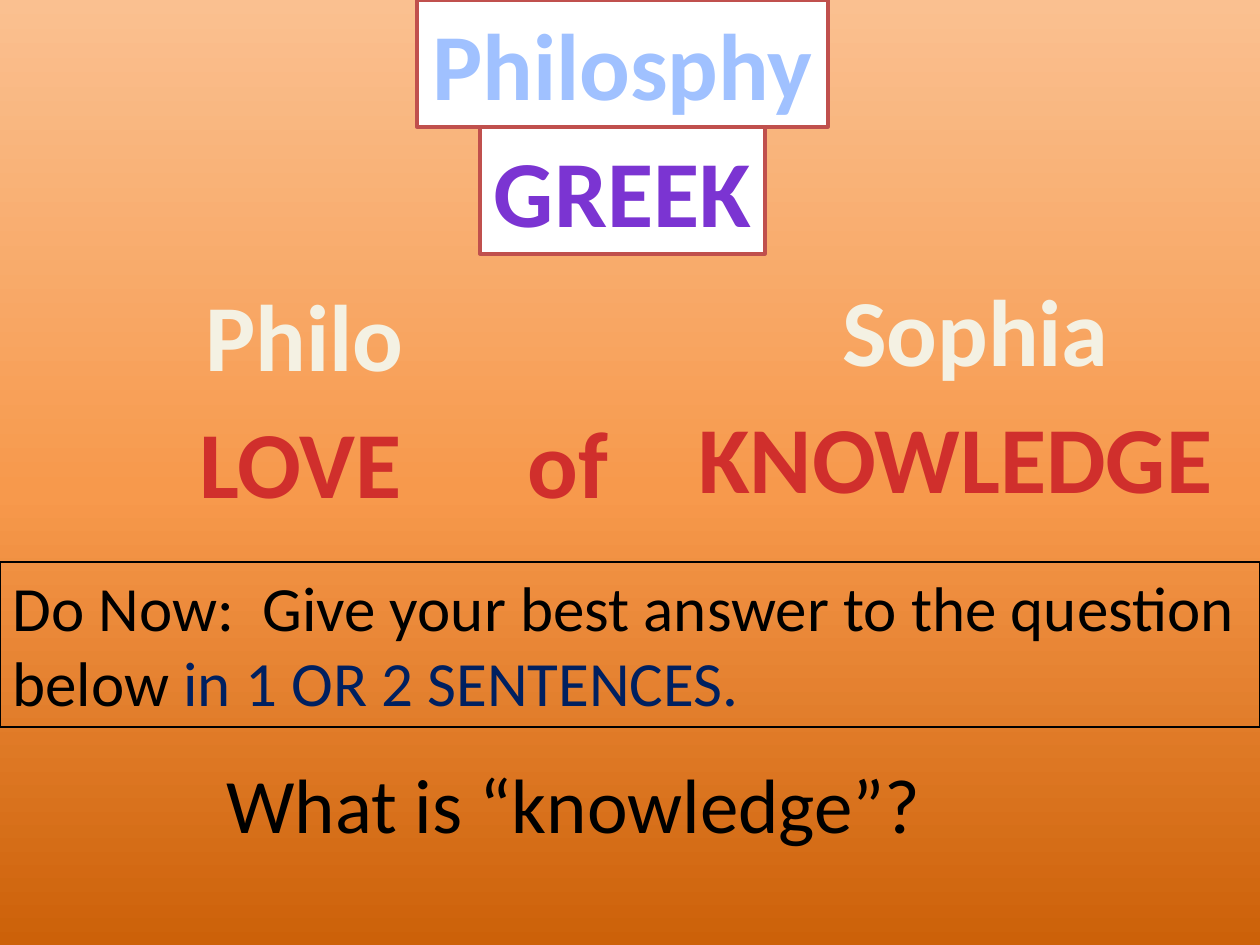
"""Builds the slide on the Greek roots of the word philosophy."""
import copy

import pptx
import pptx.dml.color
import pptx.enum.shapes
import pptx.enum.text
import pptx.oxml.ns
import pptx.util

COLORS = {
    "white": "FFFFFF",
    "black": "000000",
    "border": "C0504D",
    "sky": "A0C1FF",
    "purple": "7B34D2",
    "cream": "F4F1E3",
    "red": "D02F2C",
    "navy": "002060",
    "dark_orange": "CC6109",
    "orange": "F7994C",
    "pale_orange": "FAC090",
}


class SlideBuilder:
    """Holds the style and the current slide."""

    font = "Calibri"
    scale = 914400 / 126
    word_size = 54
    word_height = 127

    def __init__(self, presentation):
        self.slide = presentation.slides.add_slide(presentation.slide_layouts[6])

    def color(self, name):
        return pptx.dml.color.RGBColor.from_string(COLORS[name])

    def box(self, *lengths):
        return [pptx.util.Emu(round(length * self.scale)) for length in lengths]

    def background(self, stops):
        fill = self.slide.background.fill
        fill.gradient()
        fill.gradient_angle = 90
        stop_list = self.slide.element.find(".//" + pptx.oxml.ns.qn("a:gsLst"))
        while len(stop_list) < len(stops):
            stop_list.append(copy.deepcopy(stop_list[0]))
        for stop, (position, name) in zip(fill.gradient_stops, stops):
            stop.position = position
            stop.color.rgb = self.color(name)

    def text(self, shape, runs, size, bold=False, centered=False, wrap=True):
        text_frame = shape.text_frame
        text_frame.word_wrap = wrap
        text_frame.auto_size = pptx.enum.text.MSO_AUTO_SIZE.SHAPE_TO_FIT_TEXT
        text_frame.vertical_anchor = pptx.enum.text.MSO_ANCHOR.TOP
        paragraph = text_frame.paragraphs[0]
        alignment = pptx.enum.text.PP_ALIGN
        paragraph.alignment = alignment.CENTER if centered else alignment.LEFT
        for words, name in runs:
            run = paragraph.add_run()
            run.text = words
            run.font.name = self.font
            run.font.size = pptx.util.Pt(size)
            run.font.bold = bold
            run.font.color.rgb = self.color(name)

    def textbox(self, left, top, width, height):
        return self.slide.shapes.add_textbox(*self.box(left, top, width, height))

    def frame(self, left, top, width, height, line, weight, fill=None):
        shape = self.slide.shapes.add_shape(
            pptx.enum.shapes.MSO_SHAPE.RECTANGLE, *self.box(left, top, width, height)
        )
        shape.shadow.inherit = False
        if fill:
            shape.fill.solid()
            shape.fill.fore_color.rgb = self.color(fill)
        else:
            shape.fill.background()
        shape.line.color.rgb = self.color(line)
        shape.line.width = pptx.util.Pt(weight)
        return shape

    def word(self, words, name, left, top, width, framed=False):
        bounds = (left, top, width, self.word_height)
        if framed:
            shape = self.frame(*bounds, "border", 2, "white")
        else:
            shape = self.textbox(*bounds)
        self.text(shape, [(words, name)], self.word_size, True, True, False)

    def instruction(self, runs, left, top, width, height):
        shape = self.frame(left, top, width, height, "black", 0.75)
        self.text(shape, runs, 36)

    def question(self, words, left, top, width, height):
        shape = self.textbox(left, top, width, height)
        self.text(shape, [(words, "black")], 44)


def main():
    presentation = pptx.Presentation()
    presentation.slide_width = pptx.util.Inches(10)
    presentation.slide_height = pptx.util.Inches(7.5)
    builder = SlideBuilder(presentation)
    builder.background([(0, "dark_orange"), (0.48, "orange"), (1, "pale_orange")])
    builder.word("Philosphy", "sky", 417, 0, 411, framed=True)
    builder.word("GREEK", "purple", 480, 127, 285, framed=True)
    for words, name, left, top, width in [
        ("Philo", "cream", 192, 271, 225),
        ("LOVE", "red", 184, 398, 233),
        ("KNOWLEDGE", "red", 683, 393, 545),
        ("Sophia", "cream", 828, 266, 295),
        ("of", "red", 514, 398, 108),
    ]:
        builder.word(words, name, left, top, width)
    builder.instruction(
        [
            ("Do Now:  Give your best answer to the question below", "black"),
            (" in 1 OR 2 SENTENCES.", "navy"),
        ],
        0, 562, 1260, 165,
    )
    builder.question("What is “knowledge”?", 214, 750, 1046, 106)
    presentation.save("out.pptx")


if __name__ == "__main__":
    main()
